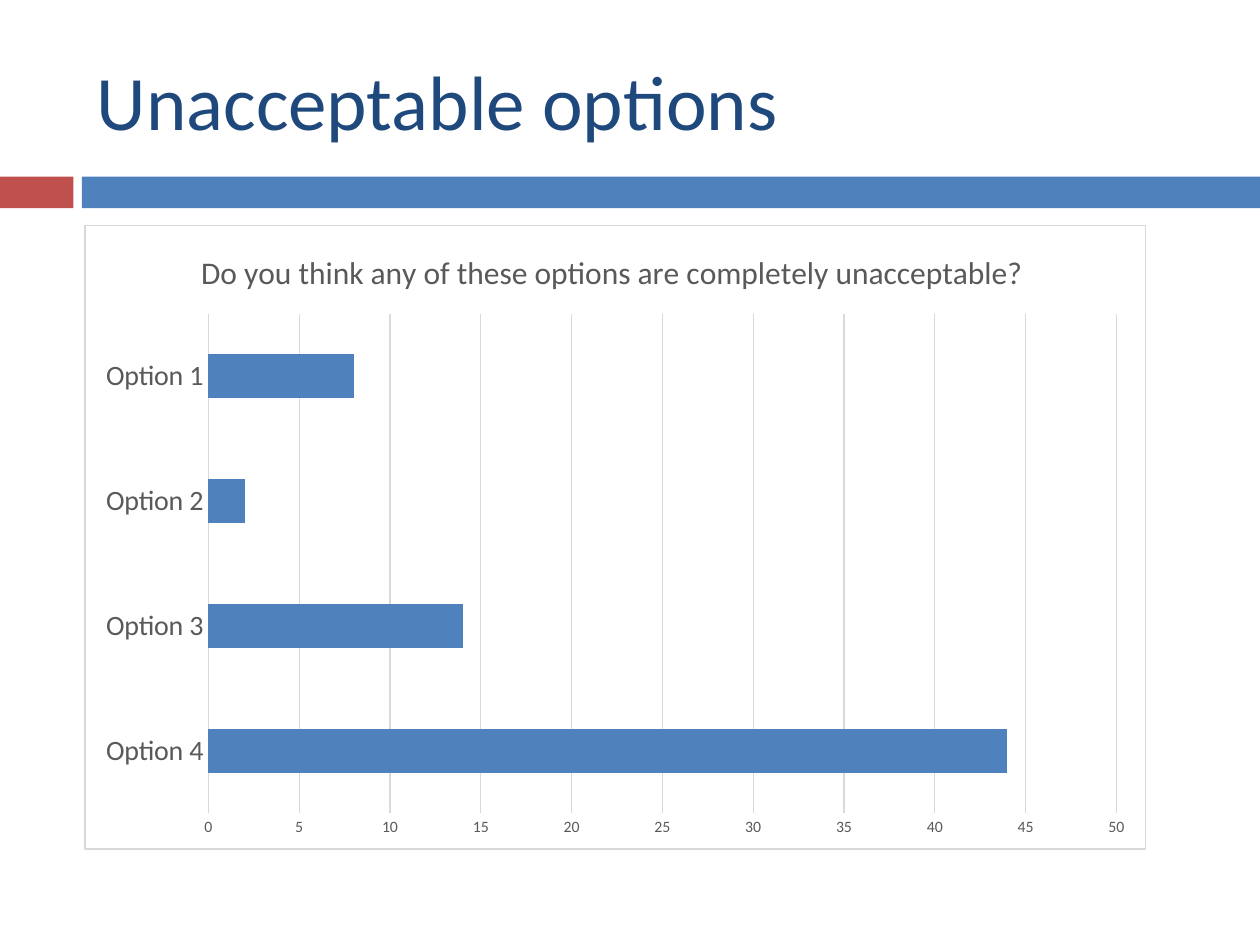
from lxml import etree
from pptx import Presentation
from pptx.chart.data import CategoryChartData
from pptx.dml.color import RGBColor
from pptx.enum.chart import XL_CHART_TYPE, XL_TICK_MARK
from pptx.enum.shapes import MSO_SHAPE
from pptx.enum.text import MSO_ANCHOR, PP_ALIGN
from pptx.oxml import parse_xml
from pptx.oxml.ns import nsdecls, qn
from pptx.util import Cm, Pt

BAR_CLUSTERED = XL_CHART_TYPE.BAR_CLUSTERED
NO_TICK = XL_TICK_MARK.NONE
RECTANGLE = MSO_SHAPE.RECTANGLE
MIDDLE = MSO_ANCHOR.MIDDLE
LEFT = PP_ALIGN.LEFT

NAVY = RGBColor(0x1F, 0x49, 0x7D)
BLUE = RGBColor(0x4F, 0x81, 0xBD)
RED = RGBColor(0xC0, 0x50, 0x4D)
GREY = RGBColor(0x59, 0x59, 0x59)
LIGHT_GREY = RGBColor(0xD9, 0xD9, 0xD9)
WHITE = RGBColor(0xFF, 0xFF, 0xFF)

FONT = "Calibri"
TITLE_ONLY = 5
HAIRLINE = Pt(0.75)


class SlideBuilder:
    """Holds the style and the slide being built."""

    def __init__(self, slide):
        self.slide = slide

    def style_font(self, font, size, color):
        font.name = FONT
        font.size = Pt(size)
        font.bold = False
        font.color.rgb = color

    def style_line(self, line):
        line.color.rgb = LIGHT_GREY
        line.width = HAIRLINE

    def add_run(self, paragraph, text, size, color):
        run = paragraph.add_run()
        run.text = text
        self.style_font(run.font, size, color)

    def title(self, text, left, top, width, height):
        shape = self.slide.shapes.title
        shape.left, shape.top, shape.width, shape.height = left, top, width, height
        frame = shape.text_frame
        frame.vertical_anchor = MIDDLE
        paragraph = frame.paragraphs[0]
        paragraph.alignment = LEFT
        self.add_run(paragraph, text, 44, NAVY)

    def band(self, left, top, width, height, color):
        shape = self.slide.shapes.add_shape(RECTANGLE, left, top, width, height)
        shape.shadow.inherit = False
        shape.fill.solid()
        shape.fill.fore_color.rgb = color
        shape.line.fill.background()

    def bar_chart(self, title, series_name, values, left, top, width, height):
        data = CategoryChartData()
        data.categories = list(values)
        data.add_series(series_name, list(values.values()))
        chart = self.slide.shapes.add_chart(
            BAR_CLUSTERED, left, top, width, height, data).chart
        self.style_font(chart.font, 10, GREY)
        chart.has_legend = False
        chart.has_title = True
        chart.chart_title.include_in_layout = False
        self.add_run(chart.chart_title.text_frame.paragraphs[0], title, 18, GREY)
        self.chart_frame(chart)

        # Bars
        plot = chart.plots[0]
        plot.gap_width = 182
        plot.vary_by_categories = False
        fill = plot.series[0].format.fill
        fill.solid()
        fill.fore_color.rgb = BLUE

        # Axes and gridlines
        for axis, size in ((chart.category_axis, 16), (chart.value_axis, 9)):
            axis.major_tick_mark = axis.minor_tick_mark = NO_TICK
            self.style_font(axis.tick_labels.font, size, GREY)
        self.style_line(chart.category_axis.format.line)
        value_axis = chart.value_axis
        value_axis.minimum_scale, value_axis.maximum_scale = 0, 50
        value_axis.major_unit = 5
        value_axis.format.line.fill.background()
        value_axis.has_major_gridlines = True
        self.style_line(value_axis.major_gridlines.format.line)

    def chart_frame(self, chart):
        properties = parse_xml(f"<c:spPr {nsdecls('c', 'a')}/>")
        line = etree.Element(qn("a:ln"), w=str(HAIRLINE))
        for parent, color in ((properties, WHITE), (line, LIGHT_GREY)):
            solid = etree.SubElement(parent, qn("a:solidFill"))
            etree.SubElement(solid, qn("a:srgbClr"), val=str(color))
        properties.append(line)
        chart.element.find(qn("c:chart")).addnext(properties)


def main():
    presentation = Presentation()
    presentation.slide_width, presentation.slide_height = Cm(25.4), Cm(19.05)
    slide = presentation.slides.add_slide(presentation.slide_layouts[TITLE_ONLY])
    builder = SlideBuilder(slide)

    # Two-colour band under the title
    band_top, band_height, band_left = Cm(3.56), Cm(0.64), Cm(1.65)
    builder.band(0, band_top, Cm(1.48), band_height, RED)
    builder.band(band_left, band_top, presentation.slide_width - band_left,
                 band_height, BLUE)

    # Title and survey chart share a left edge
    content_left = Cm(1.7)
    builder.title("Unacceptable options", content_left, Cm(0.64), Cm(22.66), Cm(2.74))
    builder.bar_chart(
        "Do you think any of these options are completely unacceptable? ",
        "Series 1",
        {"Option 4": 44, "Option 3": 14, "Option 2": 2, "Option 1": 8},
        content_left, Cm(4.53), Cm(21.41), Cm(12.6))

    presentation.save("out.pptx")


if __name__ == "__main__":
    main()
